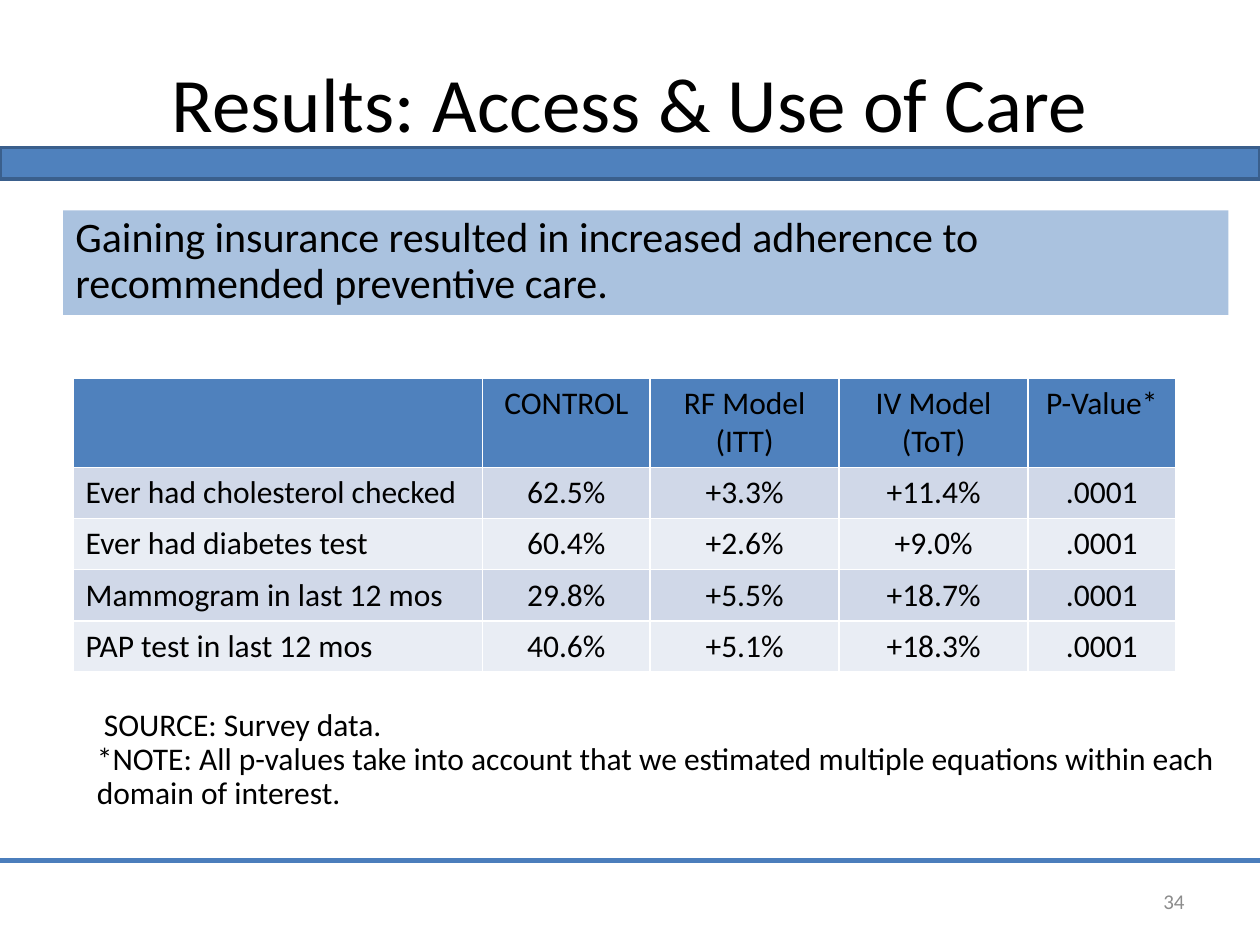
import pptx
import pptx.util
import pptx.dml.color
import pptx.enum.shapes
import pptx.enum.text
import pptx.oxml
import pptx.oxml.ns
import lxml.etree

Inches, Pt = pptx.util.Inches, pptx.util.Pt
Align = pptx.enum.text.PP_ALIGN
Anchor = pptx.enum.text.MSO_ANCHOR
Shape = pptx.enum.shapes.MSO_SHAPE

# Content
TITLE = "Results: Access & Use of Care"
CLAIM = "Gaining insurance resulted in increased adherence to recommended preventive care."
ROWS = [
    ("", "CONTROL", "RF Model\n(ITT)", "IV Model\n(ToT)", "P-Value*"),
    ("Ever had cholesterol checked", "62.5%", "+3.3%", "+11.4%", ".0001"),
    ("Ever had diabetes test", "60.4%", "+2.6%", "+9.0%", ".0001"),
    ("Mammogram in last 12 mos", "29.8%", "+5.5%", "+18.7%", ".0001"),
    ("PAP test in last 12 mos", "40.6%", "+5.1%", "+18.3%", ".0001"),
]
NOTES = (" SOURCE: Survey data.\n*NOTE: All p-values take into account that we "
         "estimated multiple equations within each domain of interest.")
PAGE = "34"

WIDTHS = [3.25, 1.33, 1.5, 1.5, 1.17]
HEAD, ROW = 0.7, 0.405
COLORS = {"blue": "4F81BD", "edge": "3A5F8C", "rule": "4B7EBC", "odd": "D0D8E8",
          "even": "E9EDF4", "text": "000000", "gray": "8C8C8C"}


def color(name):
    return pptx.dml.color.RGBColor.from_string(COLORS[name])


def box(*sides):
    return [Inches(side) for side in sides]


def write(frame, text, size=18, tint="text", align=Align.LEFT, lead=None, anchor=Anchor.TOP):
    frame.text = text
    frame.word_wrap = True
    frame.vertical_anchor = anchor
    for par in frame.paragraphs:
        par.alignment = align
        par.line_spacing = lead
        par.font.size = Pt(size)
        for run in par.runs:
            run.font.name = "Calibri"
            run.font.size = Pt(size)
            run.font.bold = False
            run.font.color.rgb = color(tint)


def block(slide, *sides):
    shape = slide.shapes.add_shape(Shape.RECTANGLE, *box(*sides))
    shape.shadow.inherit = False
    shape.fill.solid()
    shape.fill.fore_color.rgb = color("blue")
    return shape


def main():
    deck = pptx.Presentation()
    deck.slide_width, deck.slide_height = box(10, 7.5)
    slide = deck.slides.add_slide(deck.slide_layouts[5])

    # Title
    title = slide.shapes.title
    title.left, title.top, title.width, title.height = box(0.75, 0.42, 8.5, 0.77)
    write(title.text_frame, TITLE, size=44, align=Align.CENTER, anchor=Anchor.MIDDLE)

    # Bar under the title and rule above the footer
    bar = block(slide, 0, 1.17, 10, 0.25)
    bar.line.color.rgb = color("edge")
    bar.line.width = Pt(2)
    rule = slide.shapes.add_connector(
        pptx.enum.shapes.MSO_CONNECTOR.STRAIGHT, *box(0, 6.83, 10, 6.83))
    rule.line.color.rgb = color("rule")
    rule.line.width = Pt(2.5)
    lxml.etree.SubElement(rule.element.spPr, pptx.oxml.ns.qn("a:effectLst"))

    # Claim on a see-through band
    claim = block(slide, 0.5, 1.67, 9.25, 0.83)
    claim.line.fill.background()
    tone = claim.element.spPr.find(".//" + pptx.oxml.ns.qn("a:srgbClr"))
    lxml.etree.SubElement(tone, pptx.oxml.ns.qn("a:alpha"), val="48000")
    write(claim.text_frame, CLAIM, size=24, lead=0.9)

    # Results table
    heights = [HEAD] + [ROW] * (len(ROWS) - 1)
    table = slide.shapes.add_table(
        len(ROWS), len(WIDTHS), *box(0.58, 3, sum(WIDTHS), sum(heights))).table
    for col, width in zip(table.columns, WIDTHS):
        col.width = Inches(width)
    for r, (row, height) in enumerate(zip(ROWS, heights)):
        table.rows[r].height = Inches(height)
        fill = "blue" if r == 0 else "odd" if r % 2 else "even"
        for c, text in enumerate(row):
            cell = table.cell(r, c)
            cell.fill.solid()
            cell.fill.fore_color.rgb = color(fill)
            write(cell.text_frame, text, align=Align.CENTER if c else Align.LEFT)

    # Notes and page number
    notes = slide.shapes.add_textbox(*box(0.67, 5.58, 9.08, 0.92))
    write(notes.text_frame, NOTES, lead=0.9)
    page = slide.shapes.add_textbox(*box(7.17, 6.95, 2.33, 0.4))
    write(page.text_frame, PAGE, size=12, tint="gray", align=Align.RIGHT, anchor=Anchor.MIDDLE)

    deck.save("out.pptx")


if __name__ == "__main__":
    main()
